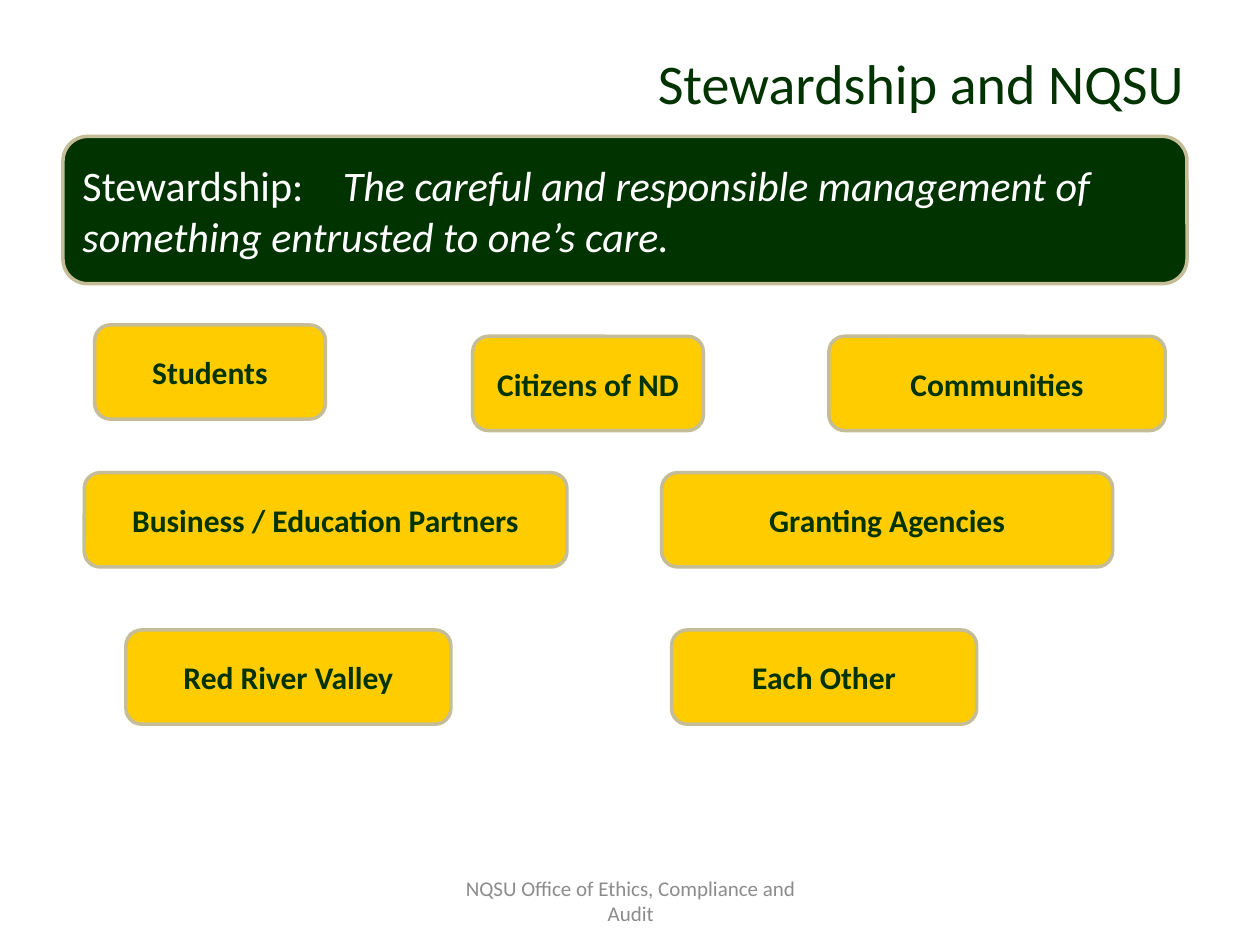
from lxml.etree import SubElement as Sub
from pptx import Presentation
from pptx.dml.color import RGBColor as RGB
from pptx.enum.shapes import MSO_SHAPE as Kind
from pptx.enum.text import MSO_ANCHOR as Anchor, PP_ALIGN as Align
from pptx.oxml.ns import qn
from pptx.util import Cm, Pt

HEX = {"green": "003300", "gold": "FFCC00", "tan": "C4BD97",
       "white": "FFFFFF", "grey": "8C8C8C"}
TITLE = {"size": Pt(32), "bold": False}
LEAD = {"size": Pt(24)}
QUOTE = {"size": Pt(24), "italic": True}
LABEL = {"size": Pt(18), "bold": True}
SMALL = {"size": Pt(12)}

# Each group: left and top within the region, width, label
GROUPS = [
    (0.21, 0, 4.65, "Students"),
    (7.83, 0.23, 4.65, "Citizens of ND"),
    (15.01, 0.23, 6.78, "Communities"),
    (0, 2.98, 9.73, "Business / Education Partners"),
    (11.64, 2.98, 9.09, "Granting Agencies"),
    (0.84, 6.15, 6.55, "Red River Valley"),
    (11.84, 6.15, 6.15, "Each Other"),
]


def color(name):
    return RGB.from_string(HEX[name])


def write(shape, runs, tint, align):
    """Fill a shape with one paragraph of (text, format) runs."""
    frame = shape.text_frame
    frame.word_wrap = True
    frame.vertical_anchor = Anchor.MIDDLE
    para = frame.paragraphs[0]
    para.alignment = align
    for text, form in runs:
        run = para.add_run()
        run.text = text
        run.font.name = "Calibri"
        run.font.color.rgb = color(tint)
        for key, value in form.items():
            setattr(run.font, key, value)
    return para


def add_card(slide, box, fill):
    card = slide.shapes.add_shape(Kind.ROUNDED_RECTANGLE, *map(Cm, box))
    card.shadow.inherit = False
    card.fill.solid()
    card.fill.fore_color.rgb = color(fill)
    card.line.color.rgb = color("tan")
    card.line.width = Pt(2)
    return card


def add_title(slide, box):
    title = slide.shapes.title
    for side, value in zip(("left", "top", "width", "height"), box):
        setattr(title, side, Cm(value))
    write(title, [("Stewardship and NQSU", TITLE)], "green", Align.RIGHT)


def add_banner(slide, box):
    runs = [("Stewardship:\t", LEAD),
            ("The careful and responsible management of something "
             "entrusted to one’s care.", QUOTE)]
    para = write(add_card(slide, box, "green"), runs, "white", Align.LEFT)
    tabs = Sub(para._p.get_or_add_pPr(), qn("a:tabLst"))
    Sub(tabs, qn("a:tab"), pos=str(Cm(5.25)), algn="l")


def add_groups(slide, box):
    left, top, high = box
    for x, y, wide, name in GROUPS:
        card = add_card(slide, (left + x, top + y, wide, high), "gold")
        write(card, [(name, LABEL)], "green", Align.CENTER)


def add_footer(slide, box):
    foot = slide.shapes.add_textbox(*map(Cm, box))
    write(foot, [("NQSU Office of Ethics, Compliance and Audit", SMALL)],
          "grey", Align.CENTER)


def main():
    deck = Presentation()
    deck.slide_width, deck.slide_height = Cm(25.4), Cm(19.05)
    slide = deck.slides.add_slide(deck.slide_layouts[5])
    add_title(slide, (1.27, 0.76, 22.86, 1.78))
    add_banner(slide, (1.27, 2.75, 22.66, 2.97))
    add_footer(slide, (8.69, 17.65, 8.05, 1.02))
    add_groups(slide, (1.7, 6.55, 1.9))
    deck.save("out.pptx")


if __name__ == "__main__":
    main()
